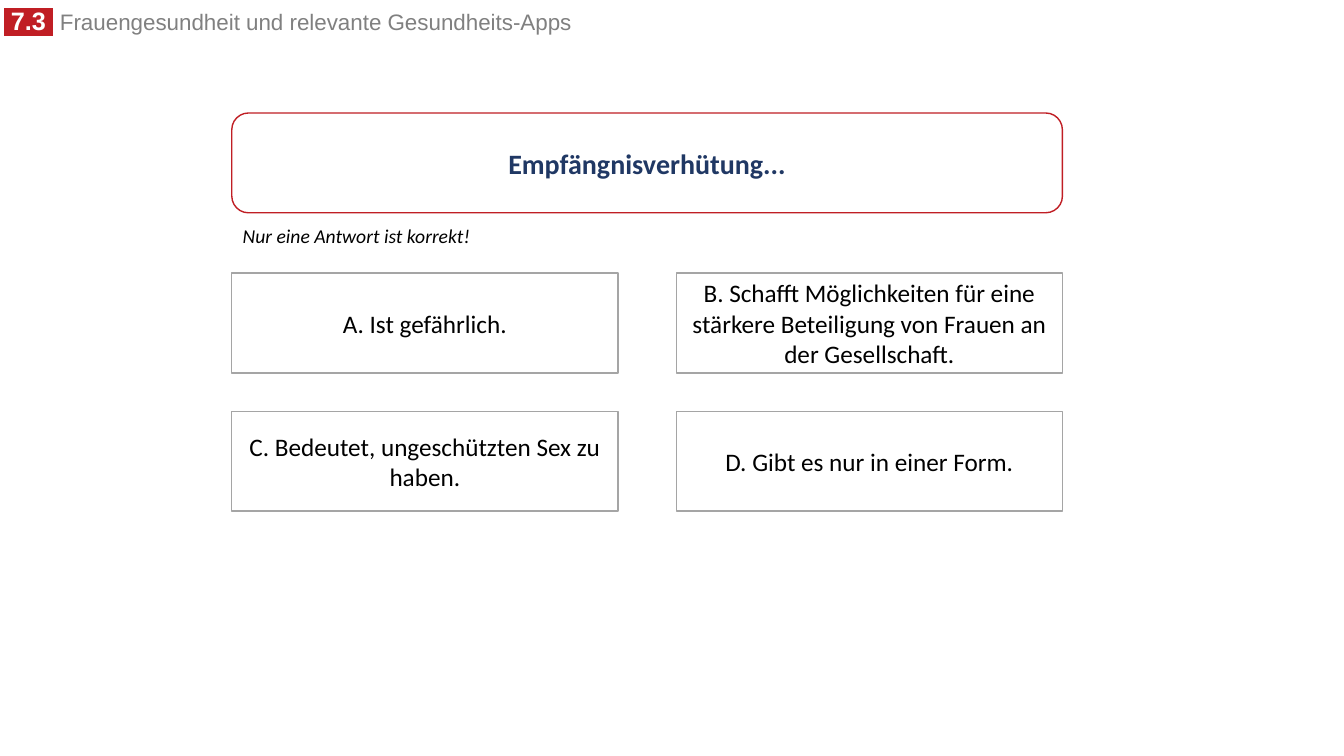
from dataclasses import dataclass

from lxml import etree
from pptx import Presentation
from pptx import util as u
from pptx.dml.color import RGBColor
from pptx.enum import shapes, text
from pptx.oxml.ns import qn

RED, GREY, WHITE, BLACK, NAVY = "C01E24", "808080", "FFFFFF", "000000", "203864"
BORDER = "A5A5A5"
LEFT, CARD_HEIGHT = 165.6, 71.3
ANSWER_TOP, ANSWER_WIDTH = 195.1, 275.8
COLUMN_STEP, ROW_STEP = 317.5, 98.7
ANSWERS = [
    "A. Ist gefährlich.",
    "B. Schafft Möglichkeiten für eine stärkere Beteiligung von Frauen an der Gesellschaft.",
    "C. Bedeutet, ungeschützten Sex zu haben.",
    "D. Gibt es nur in einer Form.",
]


@dataclass
class Card:
    label: str
    left: float
    top: float
    width: float
    border: str = BORDER
    color: str = BLACK
    size: float = 18
    bold: bool = False
    kind: shapes.MSO_SHAPE = shapes.MSO_SHAPE.RECTANGLE


def rgb(value: str) -> RGBColor:
    return RGBColor.from_string(value)


def add_text(paragraph, content: str, *, size: float, color: str, font: str = "Calibri",
             bold: bool = False, italic: bool = False, highlight: str = "") -> None:
    run = paragraph.add_run()
    run.text = content
    run.font.name = font
    run.font.size = u.Pt(size)
    run.font.bold = bold
    run.font.italic = italic
    run.font.color.rgb = rgb(color)
    if highlight:
        marker = etree.Element(qn("a:highlight"))
        etree.SubElement(marker, qn("a:srgbClr"), val=highlight)
        run.font._element.find(qn("a:solidFill")).addnext(marker)


def add_box(slide, left: float, top: float, width: float, height: float, wrap: bool):
    """Add a text box that grows with its text and return its first paragraph."""
    shape = slide.shapes.add_textbox(u.Pt(left), u.Pt(top), u.Pt(width), u.Pt(height))
    shape.text_frame.word_wrap = wrap
    shape.text_frame.auto_size = text.MSO_AUTO_SIZE.SHAPE_TO_FIT_TEXT
    return shape.text_frame.paragraphs[0]


def add_card(slide, card: Card) -> None:
    shape = slide.shapes.add_shape(card.kind, u.Pt(card.left), u.Pt(card.top),
                                   u.Pt(card.width), u.Pt(CARD_HEIGHT))
    shape.shadow.inherit = False
    shape.fill.solid()
    shape.fill.fore_color.rgb = rgb(WHITE)
    shape.line.color.rgb = rgb(card.border)
    shape.line.width = u.Pt(1)
    shape.text_frame.word_wrap = True
    shape.text_frame.vertical_anchor = text.MSO_ANCHOR.MIDDLE
    paragraph = shape.text_frame.paragraphs[0]
    paragraph.alignment = text.PP_ALIGN.CENTER
    add_text(paragraph, card.label, size=card.size, color=card.color, bold=card.bold)


def main() -> None:
    presentation = Presentation()
    presentation.slide_width, presentation.slide_height = u.Pt(960), u.Pt(540)
    slide = presentation.slides.add_slide(presentation.slide_layouts[6])

    header = add_box(slide, -4.3, 4.3, 494, 25.2, wrap=True)
    header.line_spacing = 0.8
    add_text(header, " 7.3 ", size=18, color=WHITE, font="Arial", bold=True, highlight=RED)
    add_text(header, " ", size=18, color=GREY, font="Arial")
    add_text(header, "Frauengesundheit und relevante Gesundheits-Apps",
             size=16, color=GREY, font="Arial")

    question = Card("Empfängnisverhütung...", LEFT, 80.7, COLUMN_STEP + ANSWER_WIDTH,
                    border=RED, color=NAVY, size=20, bold=True,
                    kind=shapes.MSO_SHAPE.ROUNDED_RECTANGLE)
    add_card(slide, question)
    for index, answer in enumerate(ANSWERS):
        row, column = divmod(index, 2)
        add_card(slide, Card(answer, LEFT + column * COLUMN_STEP,
                             ANSWER_TOP + row * ROW_STEP, ANSWER_WIDTH))

    hint = add_box(slide, 166.3, 156.2, 177.8, 24.5, wrap=False)
    add_text(hint, "Nur eine Antwort ist korrekt!", size=14, color=BLACK, italic=True)

    presentation.save("out.pptx")


if __name__ == "__main__":
    main()
